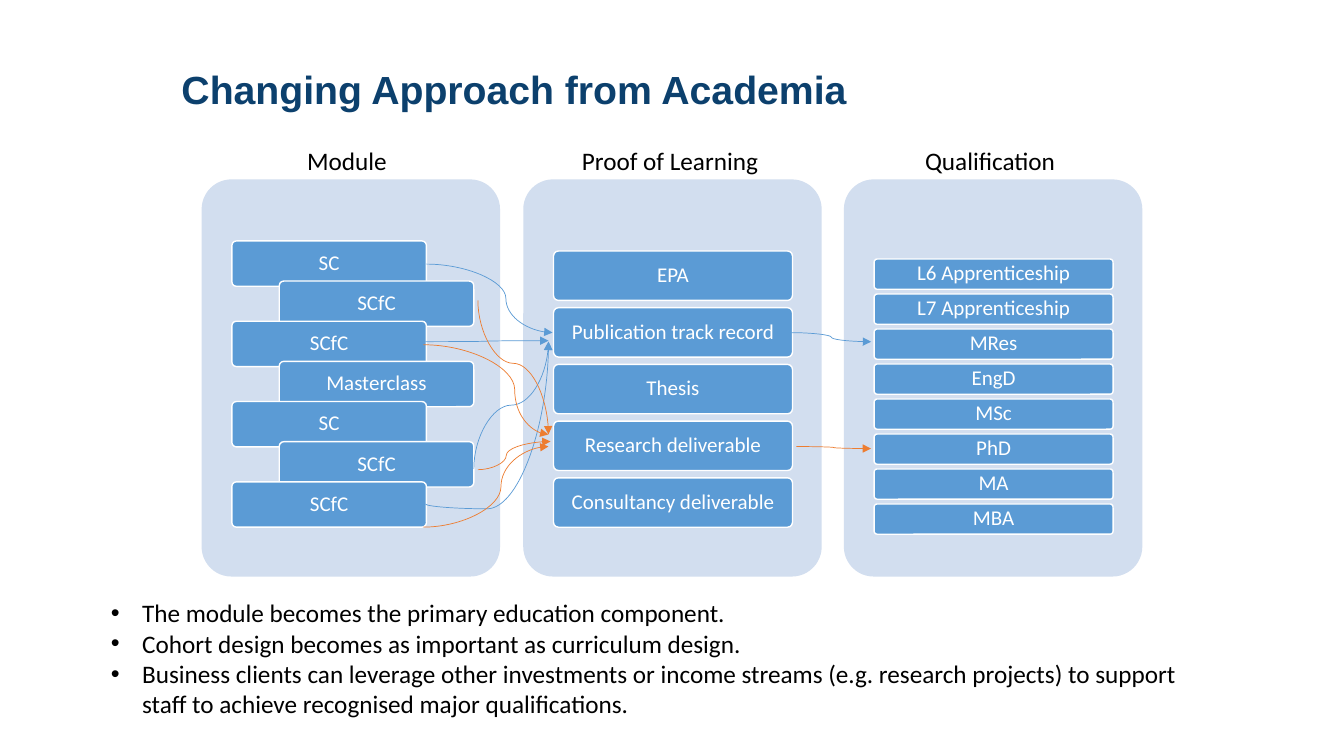
"""Build the slide on the changing approach from academia."""
from dataclasses import dataclass

from lxml import etree
from pptx import Presentation
from pptx import util as u
from pptx.dml.color import RGBColor
from pptx.enum import shapes, text
from pptx.oxml.ns import qn

NAVY = RGBColor(0x0C, 0x40, 0x6D)
PALE = RGBColor(0xD2, 0xDE, 0xEF)
BLUE = RGBColor(0x5B, 0x9B, 0xD5)
ORANGE = RGBColor(0xED, 0x7D, 0x31)
WHITE = RGBColor(0xFF, 0xFF, 0xFF)
BLACK = RGBColor(0x00, 0x00, 0x00)

PANEL_TOP, PANEL_WIDTH, PANEL_HEIGHT = 1.78, 2.96, 3.94
CHIP_INDENT, STAGGER, CORNER = 0.3, 0.47, 0.1
TITLE = "Changing Approach from Academia"
BULLETS = (
    "The module becomes the primary education component.",
    "Cohort design becomes as important as curriculum design.",
    "Business clients can leverage other investments or income streams (e.g. research projects) "
    "to support staff to achieve recognised major qualifications.",
)


@dataclass(frozen=True)
class Column:
    heading: str
    heading_left: float
    heading_width: float
    left: float
    labels: tuple[str, ...]
    first_top: float
    last_top: float
    chip_width: float
    chip_height: float
    stagger: float = 0


@dataclass(frozen=True)
class Arrow:
    start: tuple[float, float]
    end: tuple[float, float]
    color: RGBColor
    bend: float = 0.5
    turn: int = 0


COLUMNS = (
    Column("Module", 2.42, 2.04, 2,
           ("SC", "SCfC", "SCfC", "Masterclass", "SC", "SCfC", "SCfC"),
           2.39, 4.78, 1.93, 0.45, STAGGER),
    Column("Proof of Learning", 5.49, 2.31, 5.19,
           ("EPA", "Publication track record", "Thesis", "Research deliverable",
            "Consultancy deliverable"),
           2.49, 4.74, 2.37, 0.49),
    Column("Qualification", 8.8, 2.04, 8.37,
           ("L6 Apprenticeship", "L7 Apprenticeship", "MRes", "EngD", "MSc", "PhD", "MA", "MBA"),
           2.57, 5, 2.37, 0.3),
)
ARROWS = (
    Arrow((4.23, 2.62), (5.48, 3.3), BLUE, 0.63),
    Arrow((4.7, 4.65), (5.44, 3.39), BLUE, turn=90),
    Arrow((4.22, 3.39), (5.44, 3.38), BLUE),
    Arrow((4.22, 5), (5.44, 3.39), BLUE, -0.03, 90),
    Arrow((7.85, 3.3), (8.64, 3.39), BLUE),
    Arrow((4.2, 5.23), (5.44, 4.43), ORANGE, 0.62),
    Arrow((4.74, 4.66), (5.46, 4.38), ORANGE, 0.39),
    Arrow((4.2, 3.42), (5.44, 4.31), ORANGE, 0.73),
    Arrow((4.74, 2.98), (5.44, 4.31), ORANGE, 0.47, 270),
    Arrow((7.9, 4.43), (8.64, 4.45), ORANGE),
)


def place(shape, left: float, top: float, width: float, height: float) -> None:
    """Set the position and size of a shape in inches."""
    shape.left, shape.top = u.Inches(left), u.Inches(top)
    shape.width, shape.height = u.Inches(width), u.Inches(height)


def write(para, words: str, size: float, color: RGBColor, align=text.PP_ALIGN.CENTER,
          font: str = "Calibri", bold: bool = False) -> None:
    """Add one formatted run to a paragraph."""
    para.alignment = align
    span = para.add_run()
    span.text = words
    span.font.name, span.font.size, span.font.bold = font, u.Pt(size), bold
    span.font.color.rgb = color


def add_rounded(page, left: float, top: float, width: float, height: float, fill: RGBColor):
    """Draw a flat rounded rectangle without an outline."""
    box = page.shapes.add_shape(shapes.MSO_SHAPE.ROUNDED_RECTANGLE, u.Inches(left),
                                u.Inches(top), u.Inches(width), u.Inches(height))
    box.adjustments[0] = CORNER
    box.shadow.inherit = False
    box.fill.solid()
    box.fill.fore_color.rgb = fill
    box.line.fill.background()
    return box


def add_chip(page, label: str, left: float, top: float, width: float, height: float) -> None:
    """Draw one labelled chip."""
    chip = add_rounded(page, left, top, width, height, BLUE)
    chip.line.color.rgb, chip.line.width = WHITE, u.Pt(1)
    frame = chip.text_frame
    frame.word_wrap = True
    frame.vertical_anchor = text.MSO_ANCHOR.MIDDLE
    frame.margin_left = frame.margin_right = u.Inches(0.05)
    frame.margin_top = frame.margin_bottom = u.Inches(0.04)
    frame.paragraphs[0].line_spacing = 0.9
    write(frame.paragraphs[0], label, 15, WHITE)


def add_column(page, column: Column) -> None:
    """Draw a panel with its evenly spaced chips."""
    add_rounded(page, column.left, PANEL_TOP, PANEL_WIDTH, PANEL_HEIGHT, PALE)
    step = (column.last_top - column.first_top) / (len(column.labels) - 1)
    for index, label in enumerate(column.labels):
        left = column.left + CHIP_INDENT + index % 2 * column.stagger
        add_chip(page, label, left, column.first_top + index * step,
                 column.chip_width, column.chip_height)


def add_heading(page, column: Column) -> None:
    """Write the heading above a panel."""
    box = page.shapes.add_textbox(u.Inches(column.heading_left), u.Inches(1.39),
                                  u.Inches(column.heading_width), u.Inches(0.4))
    box.text_frame.word_wrap = True
    box.text_frame.auto_size = text.MSO_AUTO_SIZE.SHAPE_TO_FIT_TEXT
    write(box.text_frame.paragraphs[0], column.heading, 18, BLACK)


def add_arrow(page, arrow: Arrow) -> None:
    """Draw a curved arrow, turning its frame when it leaves vertically."""
    (x1, y1), (x2, y2) = arrow.start, arrow.end
    across, down = x2 - x1, y2 - y1
    if arrow.turn:
        sign = 1 if arrow.turn == 90 else -1
        across, down = sign * down, -sign * across
    middle_x, middle_y = (x1 + x2) / 2, (y1 + y2) / 2
    curve = page.shapes.add_connector(
        shapes.MSO_CONNECTOR.CURVE,
        u.Inches(middle_x - across / 2), u.Inches(middle_y - down / 2),
        u.Inches(middle_x + across / 2), u.Inches(middle_y + down / 2))
    curve.line.color.rgb, curve.line.width = arrow.color, u.Pt(0.5)
    properties = curve._element.spPr
    if arrow.turn:
        properties.find(qn("a:xfrm")).set("rot", str(arrow.turn * 60000))
    guides = properties.find(qn("a:prstGeom")).find(qn("a:avLst"))
    etree.SubElement(guides, qn("a:gd"), name="adj1", fmla=f"val {round(arrow.bend * 100000)}")
    etree.SubElement(properties.find(qn("a:ln")), qn("a:tailEnd"), type="triangle")
    etree.SubElement(properties, qn("a:effectLst"))


def fill_title(title) -> None:
    """Place and write the slide title."""
    place(title, 1.7, 0.44, 11.18, 0.94)
    frame = title.text_frame
    frame.auto_size = text.MSO_AUTO_SIZE.NONE
    frame.vertical_anchor = text.MSO_ANCHOR.MIDDLE
    frame.paragraphs[0].line_spacing = 0.9
    write(frame.paragraphs[0], TITLE, 28, NAVY, text.PP_ALIGN.LEFT, "Arial", True)


def fill_bullets(body) -> None:
    """Place and write the bulleted list."""
    place(body, 1, 5.88, 10.87, 1.31)
    frame = body.text_frame
    frame.auto_size = text.MSO_AUTO_SIZE.SHAPE_TO_FIT_TEXT
    for index, words in enumerate(BULLETS):
        para = frame.add_paragraph() if index else frame.paragraphs[0]
        properties = para._p.get_or_add_pPr()
        properties.set("marL", str(u.Inches(0.31)))
        properties.set("indent", str(-u.Inches(0.31)))
        etree.SubElement(properties, qn("a:buFont"), typeface="Arial")
        etree.SubElement(properties, qn("a:buChar"), char="•")
        para.space_before = u.Pt(0)
        write(para, words, 18, BLACK, text.PP_ALIGN.LEFT)


def main() -> None:
    """Build and save the deck."""
    deck = Presentation()
    deck.slide_width, deck.slide_height = u.Inches(13.33), u.Inches(7.5)
    page = deck.slides.add_slide(deck.slide_layouts[1])
    fill_title(page.shapes.title)
    fill_bullets(page.placeholders[1])
    for column in COLUMNS:
        add_column(page, column)
        add_heading(page, column)
    for arrow in ARROWS:
        add_arrow(page, arrow)
    deck.save("out.pptx")


if __name__ == "__main__":
    main()
